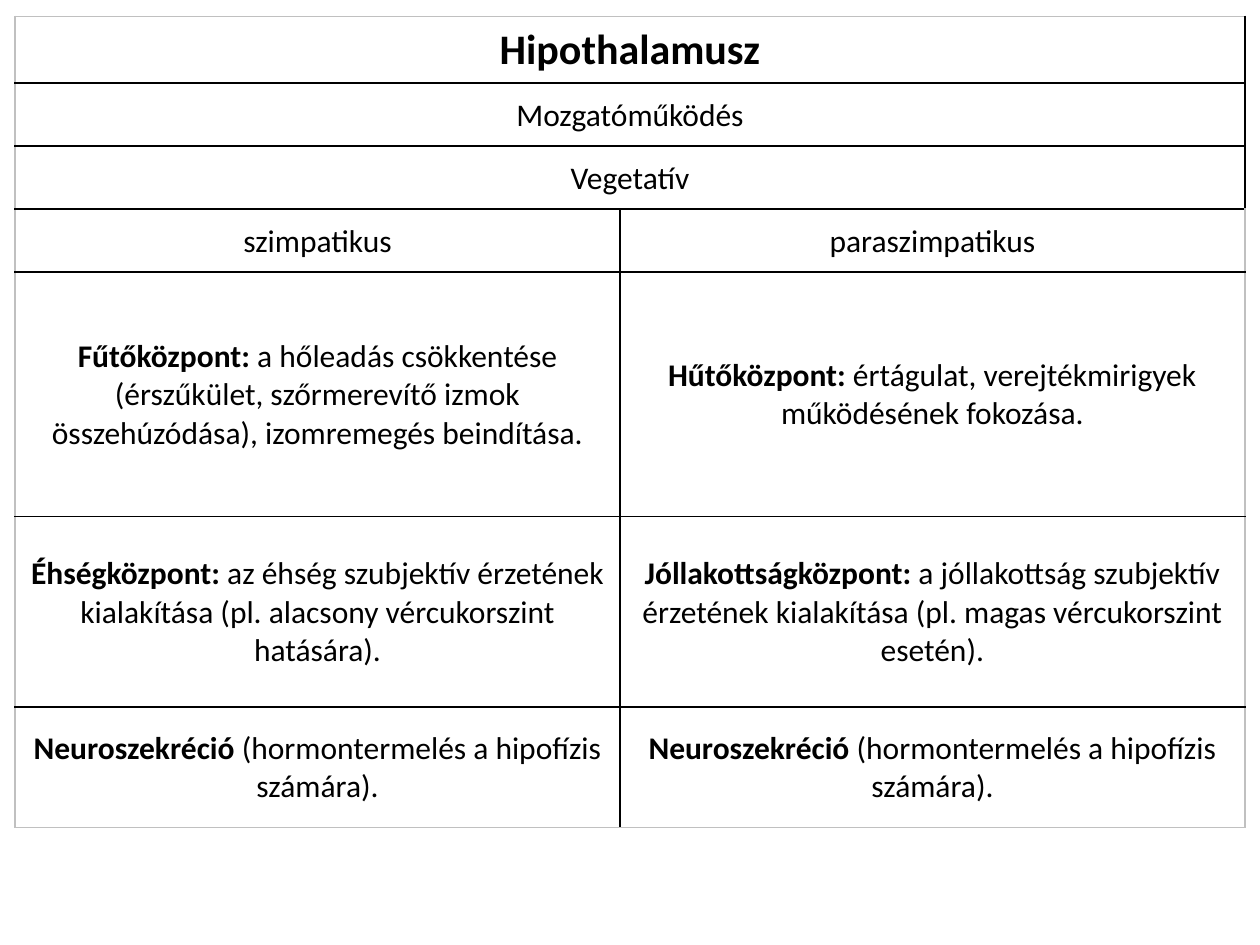
from dataclasses import dataclass

from lxml.etree import SubElement
from pptx import Presentation
from pptx.dml.color import RGBColor
from pptx.enum.text import MSO_ANCHOR, PP_ALIGN
from pptx.oxml.ns import qn
from pptx.util import Inches, Pt


@dataclass(frozen=True)
class Theme:
    font: str = "Calibri"
    title_size: int = 24
    body_size: int = 18
    text: str = "000000"
    grid: str = "000000"
    frame: str = "C0C0C0"
    line_width: int = 1


THEME = Theme()


def write(cell, text, lead="", size=THEME.body_size, bold=False):
    """Fill a cell with centred text after an optional bold lead."""
    cell.vertical_anchor = MSO_ANCHOR.MIDDLE
    cell.margin_left = cell.margin_right = cell.margin_top = Inches(0.01)
    cell.margin_bottom = Inches(0)
    paragraph = cell.text_frame.paragraphs[0]
    paragraph.alignment = PP_ALIGN.CENTER
    for part, is_bold in ((lead, True), (text, bold)):
        if part:
            run = paragraph.add_run()
            run.text = part
            run.font.name = THEME.font
            run.font.size = Pt(size)
            run.font.bold = is_bold
            run.font.color.rgb = RGBColor.from_string(THEME.text)


def draw_borders(cell, colors):
    """Draw the left, right, top and bottom borders in the given colours."""
    properties = cell._tc.get_or_add_tcPr()
    for side, color in zip("LRTB", colors):
        border = SubElement(properties, qn(f"a:ln{side}"), w=str(Pt(THEME.line_width)))
        fill = SubElement(border, qn("a:solidFill"))
        SubElement(fill, qn("a:srgbClr"), val=color)


headings = ["Hipothalamusz", "Mozgatóműködés", "Vegetatív"]
neurosecretion = ("Neuroszekréció", " (hormontermelés a hipofízis számára).")
centres = [
    [("", "szimpatikus"), ("", "paraszimpatikus")],
    [
        ("Fűtőközpont:", " a hőleadás csökkentése (érszűkület, szőrmerevítő izmok "
         "összehúzódása), izomremegés beindítása."),
        ("Hűtőközpont:", " értágulat, verejtékmirigyek működésének fokozása."),
    ],
    [
        ("Éhségközpont:", " az éhség szubjektív érzetének kialakítása "
         "(pl. alacsony vércukorszint hatására)."),
        ("Jóllakottságközpont:", " a jóllakottság szubjektív érzetének kialakítása "
         "(pl. magas vércukorszint esetén)."),
    ],
    [neurosecretion, neurosecretion],
]
column_widths = [4.8, 4.96]
row_heights = [0.53, 0.5, 0.5, 0.5, 1.94, 1.51, 0.96]
last_row, last_column = len(row_heights) - 1, len(column_widths) - 1

presentation = Presentation()
presentation.slide_width = Inches(10)
presentation.slide_height = Inches(7.5)
slide = presentation.slides.add_slide(presentation.slide_layouts[6])

table = slide.shapes.add_table(
    len(row_heights), len(column_widths), Inches(0.12), Inches(0.13),
    Inches(sum(column_widths)), Inches(sum(row_heights)),
).table
table.first_row = table.horz_banding = False
for column, width in zip(table.columns, column_widths):
    column.width = Inches(width)
for row, height in zip(table.rows, row_heights):
    row.height = Inches(height)

for r in range(len(row_heights)):
    for c in range(len(column_widths)):
        cell = table.cell(r, c)
        on_frame = (c == 0, c == last_column, r == 0, r == last_row)
        draw_borders(cell, [THEME.frame if edge else THEME.grid for edge in on_frame])
        cell.fill.background()

for r, heading in enumerate(headings):
    table.cell(r, 0).merge(table.cell(r, last_column))
    is_title = r == 0
    write(table.cell(r, 0), heading, bold=is_title,
          size=THEME.title_size if is_title else THEME.body_size)

for r, pair in enumerate(centres, start=len(headings)):
    for c, (lead, text) in enumerate(pair):
        write(table.cell(r, c), text, lead=lead)

presentation.save("out.pptx")
